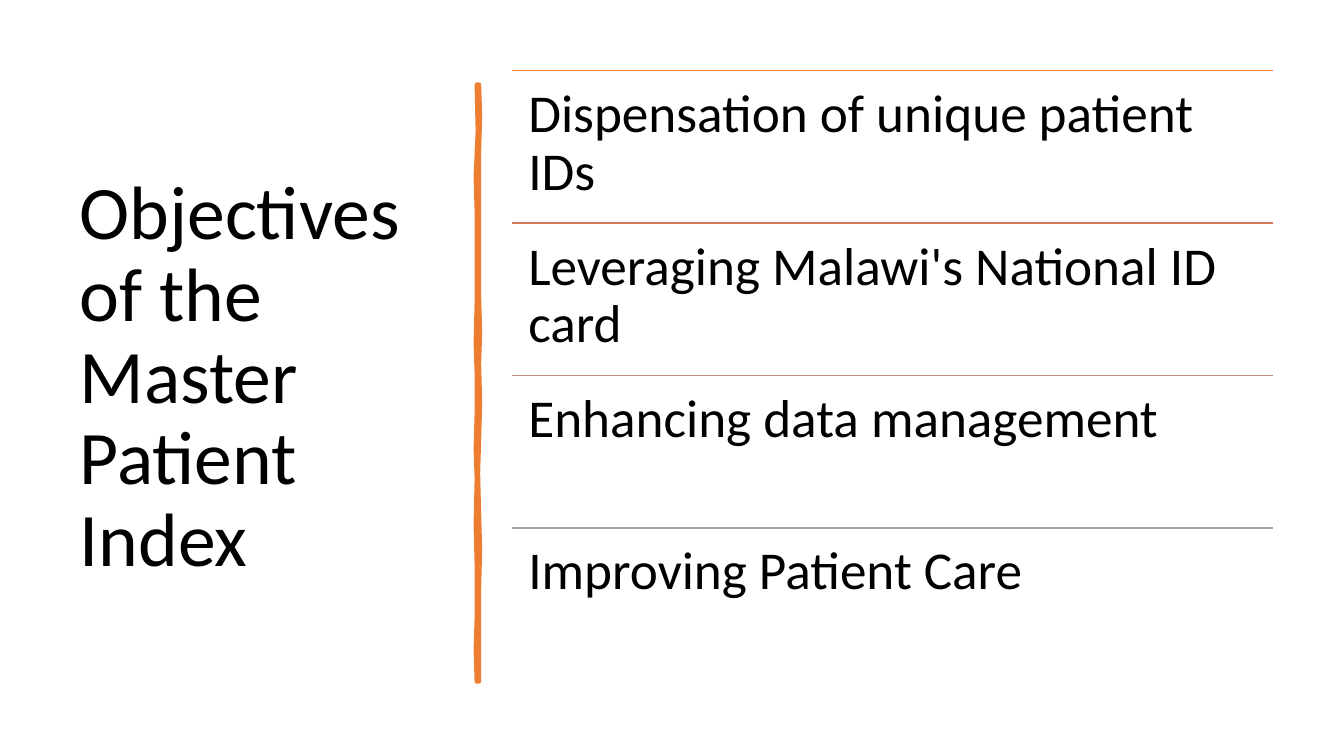
"""Build the slide listing the objectives of the Master Patient Index."""
from lxml import etree
from pptx import Presentation
from pptx.dml.color import RGBColor
from pptx.enum.shapes import MSO_CONNECTOR
from pptx.enum.text import MSO_ANCHOR, MSO_AUTO_SIZE, PP_ALIGN
from pptx.oxml.ns import qn
from pptx.util import Inches, Pt

STRAIGHT = MSO_CONNECTOR.STRAIGHT
TOP, MIDDLE = MSO_ANCHOR.TOP, MSO_ANCHOR.MIDDLE
NO_FIT, LEFT = MSO_AUTO_SIZE.NONE, PP_ALIGN.LEFT

COLORS = {"text": "000000", "brush": "ED7D31"}
TITLE = "Objectives of the Master Patient Index"
OBJECTIVES = [
    ("Dispensation of unique patient IDs", "ED7D31"),
    ("Leveraging Malawi's National ID card", "D17B5C"),
    ("Enhancing data management", "B98A82"),
    ("Improving Patient Care", "A5A5A5"),
]
BRUSH_RIGHT = [
    (4.75, 0.84), (4.76, 1.15), (4.75, 1.5), (4.75, 1.8), (4.75, 2.26),
    (4.75, 2.94), (4.76, 3.3), (4.75, 3.6), (4.76, 4.0), (4.75, 4.36),
    (4.74, 4.7), (4.75, 5.1), (4.76, 5.45), (4.75, 5.84), (4.75, 6.2),
    (4.75, 6.76),
]
BRUSH_LEFT = [
    (4.73, 6.76), (4.72, 6.45), (4.73, 6.13), (4.73, 5.6), (4.72, 5.2),
    (4.73, 4.75), (4.72, 4.45), (4.73, 4.1), (4.73, 3.7), (4.72, 3.4),
    (4.73, 3.0), (4.73, 2.5), (4.73, 2.1), (4.72, 1.75), (4.74, 1.3),
    (4.73, 0.84),
]
TITLE_BOX = (0.69, 0.7, 3.74, 6.11)
LIST_LEFT, LIST_TOP, LIST_WIDTH, ROW_HEIGHT = 5.08, 0.7, 7.55, 1.51
ROW_PITCH = 6.05 / len(OBJECTIVES)
ROW_INSET = Inches(0.16)
TITLE_FORMAT = {"vertical_anchor": MIDDLE}
ROW_FORMAT = {
    "vertical_anchor": TOP,
    "margin_left": ROW_INSET, "margin_right": ROW_INSET,
    "margin_top": ROW_INSET, "margin_bottom": ROW_INSET,
}


def write(frame, words, size, frame_format):
    """Fill a text frame with one left-aligned paragraph."""
    frame.text = words
    paragraph = frame.paragraphs[0]
    formats = [
        (frame, {"word_wrap": True, "auto_size": NO_FIT, **frame_format}),
        (paragraph, {"alignment": LEFT, "line_spacing": 0.9}),
        (paragraph.runs[0].font, {"name": "Calibri", "size": Pt(size)}),
    ]
    for target, values in formats:
        for key, value in values.items():
            setattr(target, key, value)
    paragraph.runs[0].font.color.rgb = RGBColor.from_string(COLORS["text"])


def add_title(slide):
    """Place the title on the left."""
    title = slide.shapes.title
    for key, value in zip(("left", "top", "width", "height"), TITLE_BOX):
        setattr(title, key, Inches(value))
    write(title.text_frame, TITLE, 54, TITLE_FORMAT)


def add_brush_stroke(slide):
    """Draw the uneven vertical divider."""
    start, *rest = [(Inches(x), Inches(y)) for x, y in BRUSH_RIGHT + BRUSH_LEFT]
    builder = slide.shapes.build_freeform(*start)
    builder.add_line_segments(rest, close=True)
    stroke = builder.convert_to_shape()
    stroke.shadow.inherit = False
    for fill in (stroke.fill, stroke.line.fill):
        fill.solid()
        fill.fore_color.rgb = RGBColor.from_string(COLORS["brush"])
    stroke.line.width = Pt(3.25)


def add_objective(slide, top, words, rule_color):
    """Add one objective below its rule."""
    left, width = Inches(LIST_LEFT), Inches(LIST_WIDTH)
    rule = slide.shapes.add_connector(STRAIGHT, left, top, left + width, top)
    rule.line.color.rgb = RGBColor.from_string(rule_color)
    rule.line.width = Pt(1)
    etree.SubElement(rule.element.spPr, qn("a:effectLst"))
    row = slide.shapes.add_textbox(left, top, width, Inches(ROW_HEIGHT))
    write(row.text_frame, words, 38, ROW_FORMAT)


def main():
    """Build and save the slide."""
    deck = Presentation()
    deck.slide_width, deck.slide_height = Inches(13.33), Inches(7.5)
    slide = deck.slides.add_slide(deck.slide_layouts[5])
    add_title(slide)
    add_brush_stroke(slide)
    for index, (words, rule_color) in enumerate(OBJECTIVES):
        add_objective(slide, Inches(LIST_TOP + index * ROW_PITCH), words, rule_color)
    deck.save("out.pptx")


if __name__ == "__main__":
    main()
